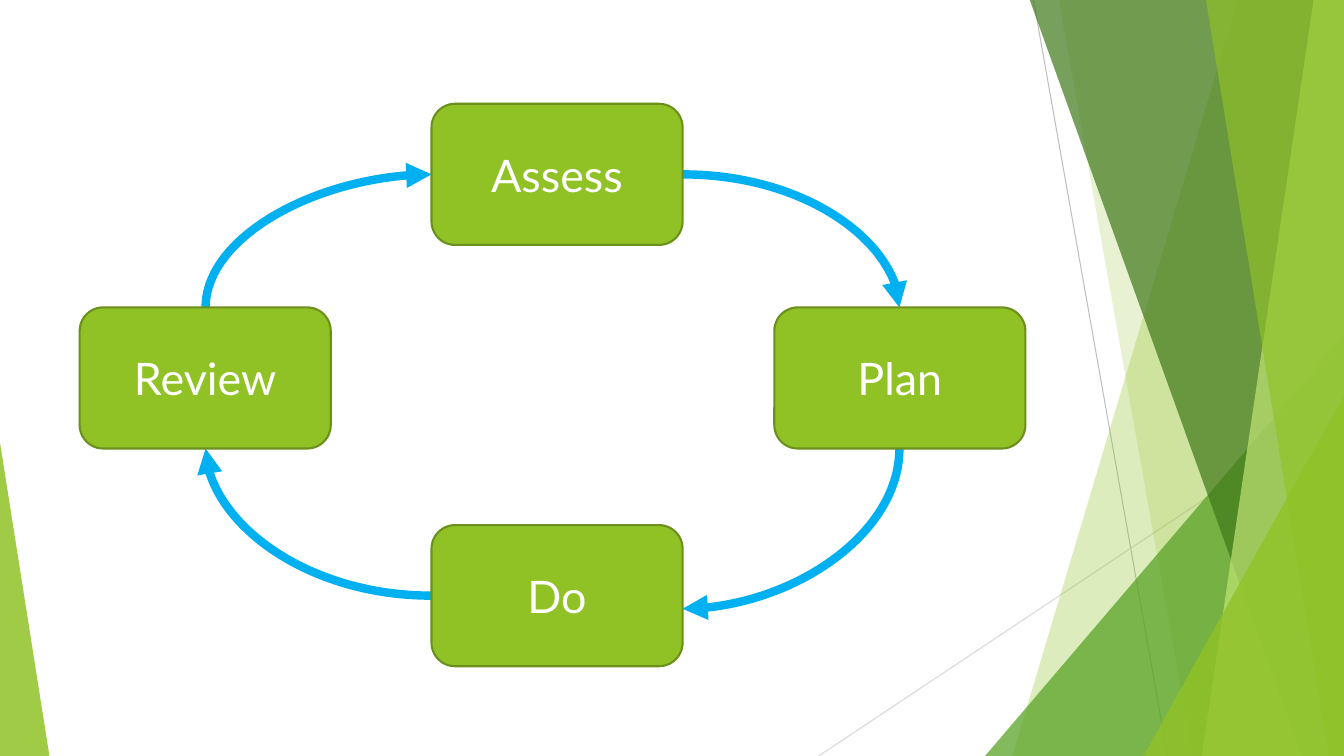
"""Build a slide with the Assess, Plan, Do, Review cycle beside faceted green bands."""
import pptx
import pptx.dml.color
import pptx.enum.shapes
import pptx.enum.text
import pptx.oxml.ns
import pptx.util
from lxml import etree

Inches = pptx.util.Inches
Pt = pptx.util.Pt
SHAPES = pptx.enum.shapes.MSO_SHAPE
LINES = pptx.enum.shapes.MSO_CONNECTOR
qn = pptx.oxml.ns.qn

WIDTH, HEIGHT = 13.33, 7.5
BOX_WIDTH, BOX_HEIGHT = 2.49, 1.4
COLORS = {
    "lime": "90C226", "green": "54A021", "forest": "3F7819", "pale": "C0E474",
    "border": "6B901C", "arrow": "00B0F0", "text": "FFFFFF",
    "gray": "BFBFBF", "light_gray": "D9D9D9",
}
BOXES = {"Assess": (4.28, 1.03), "Plan": (7.68, 3.05),
         "Do": (4.28, 5.21), "Review": (0.79, 3.05)}
ARROWS = [
    ((6.77, 1.73), (8.92, 3.05), False),
    ((8.92, 4.45), (6.77, 6.04), True),
    ((4.28, 5.91), (2.04, 4.45), False),
    ((2.04, 3.05), (4.28, 1.73), True),
]


def rgb(name):
    return pptx.dml.color.RGBColor.from_string(COLORS[name])


def fill_shape(shape, color, opacity=100):
    shape.shadow.inherit = False
    shape.fill.solid()
    shape.fill.fore_color.rgb = rgb(color)
    if opacity < 100:
        shape.line.fill.background()
        tint = shape.fill._xPr.find(".//" + qn("a:srgbClr"))
        etree.SubElement(tint, qn("a:alpha"), val=str(opacity * 1000))


def add_line(page, kind, start, end, color, weight):
    line = page.shapes.add_connector(kind, *map(Inches, start + end))
    line.line.color.rgb = rgb(color)
    line.line.width = Pt(weight)
    etree.SubElement(line._element.spPr, qn("a:effectLst"))
    return line


def add_band(page, top_left, bottom_left, color, opacity):
    corners = [(top_left, -0.01), (WIDTH, -0.01), (WIDTH, HEIGHT), (bottom_left, HEIGHT)]
    points = [(Inches(x), Inches(y)) for x, y in corners]
    outline = page.shapes.build_freeform(*points[0], scale=1.0)
    outline.add_line_segments(points[1:], close=True)
    fill_shape(outline.convert_to_shape(), color, opacity)


def add_triangle(page, left, width, height, apex, color, opacity):
    triangle = page.shapes.add_shape(
        SHAPES.ISOSCELES_TRIANGLE, Inches(left), Inches(HEIGHT - height),
        Inches(width), Inches(height))
    triangle.adjustments[0] = apex
    fill_shape(triangle, color, opacity)


def add_arrow(page, start, end, leaves_vertically):
    if leaves_vertically:
        middle = [(a + b) / 2 for a, b in zip(start, end)]
        across, down = (end[1] - start[1]) / 2, (start[0] - end[0]) / 2
        start = (middle[0] - across, middle[1] - down)
        end = (middle[0] + across, middle[1] + down)
    arrow = add_line(page, LINES.CURVE, start, end, "arrow", 6)
    properties = arrow._element.spPr
    properties.find(qn("a:prstGeom")).set("prst", "curvedConnector2")
    if leaves_vertically:
        properties.find(qn("a:xfrm")).set("rot", str(90 * 60000))
    etree.SubElement(properties.find(qn("a:ln")), qn("a:tailEnd"), type="triangle")


def add_box(page, label, left, top):
    box = page.shapes.add_shape(
        SHAPES.FLOWCHART_ALTERNATE_PROCESS, Inches(left), Inches(top),
        Inches(BOX_WIDTH), Inches(BOX_HEIGHT))
    fill_shape(box, "lime")
    box.line.color.rgb = rgb("border")
    box.line.width = Pt(1.5)
    box.text_frame.vertical_anchor = pptx.enum.text.MSO_ANCHOR.MIDDLE
    para = box.text_frame.paragraphs[0]
    para.alignment = pptx.enum.text.PP_ALIGN.CENTER
    span = para.add_run()
    span.text = label
    for name, value in {"name": "Lato", "size": Pt(32)}.items():
        setattr(span.font, name, value)
    span.font.color.rgb = rgb("text")


def add_backdrop(page):
    add_line(page, LINES.STRAIGHT, (10.25, 0), (11.58, HEIGHT), "gray", 0.75)
    add_line(page, LINES.STRAIGHT, (WIDTH, 4.03), (8.12, HEIGHT), "light_gray", 0.75)
    add_band(page, 12.28, 10.04, "lime", 30)
    add_band(page, 10.5, 11.83, "lime", 20)
    add_triangle(page, 9.77, 3.56, 4.17, 1, "green", 72)
    add_band(page, 10.21, 12.91, "forest", 70)
    add_band(page, 13.03, 11.92, "pale", 70)
    add_band(page, 11.96, 13.18, "lime", 65)
    add_triangle(page, 11.34, 1.99, 3.57, 1, "lime", 80)
    add_triangle(page, 0, 0.49, 3.11, 0, "lime", 85)


def main():
    deck = pptx.Presentation()
    deck.slide_width, deck.slide_height = Inches(WIDTH), Inches(HEIGHT)
    page = deck.slides.add_slide(deck.slide_layouts[6])
    add_backdrop(page)
    for start, end, leaves_vertically in ARROWS:
        add_arrow(page, start, end, leaves_vertically)
    for label, (left, top) in BOXES.items():
        add_box(page, label, left, top)
    deck.save("out.pptx")


if __name__ == "__main__":
    main()
